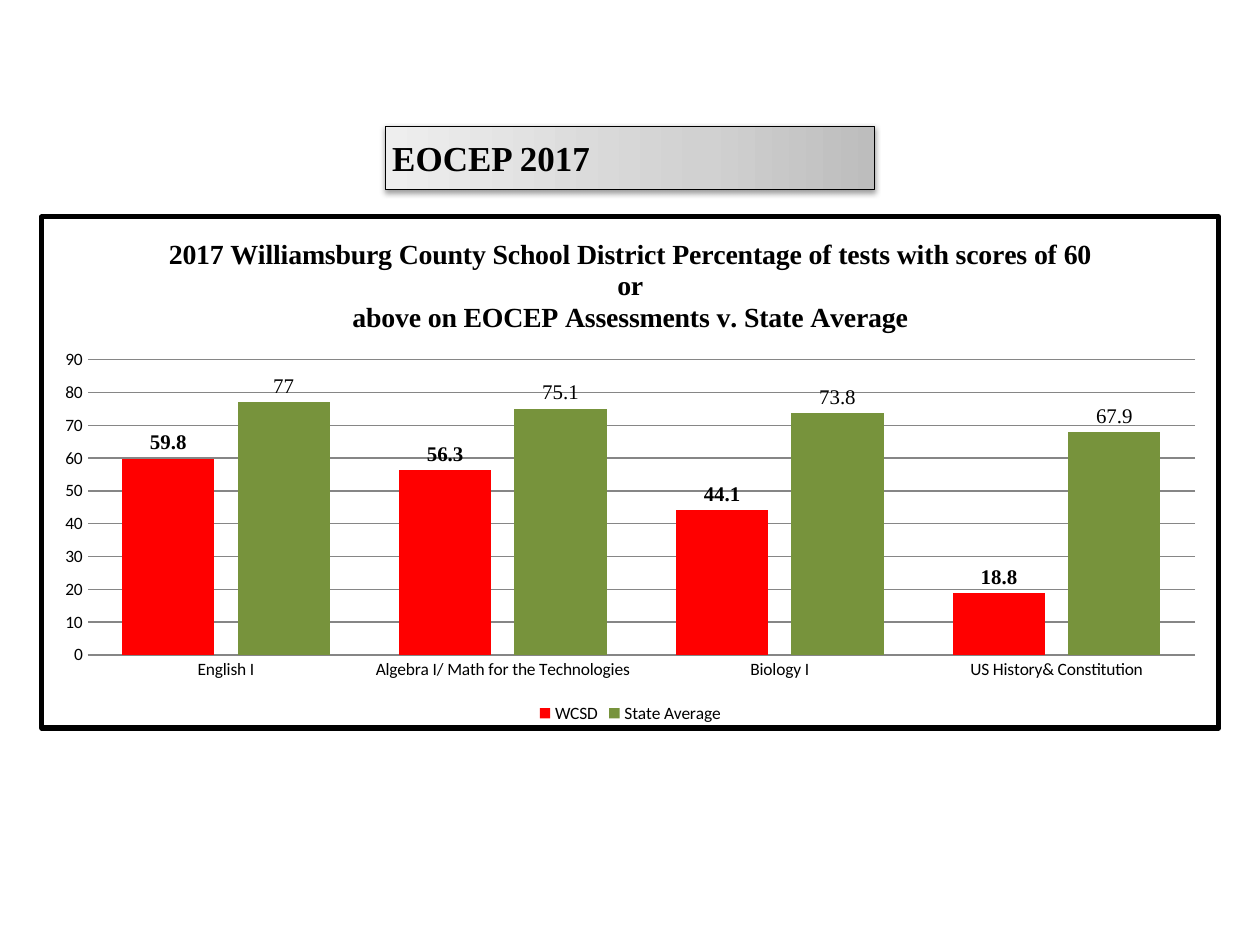
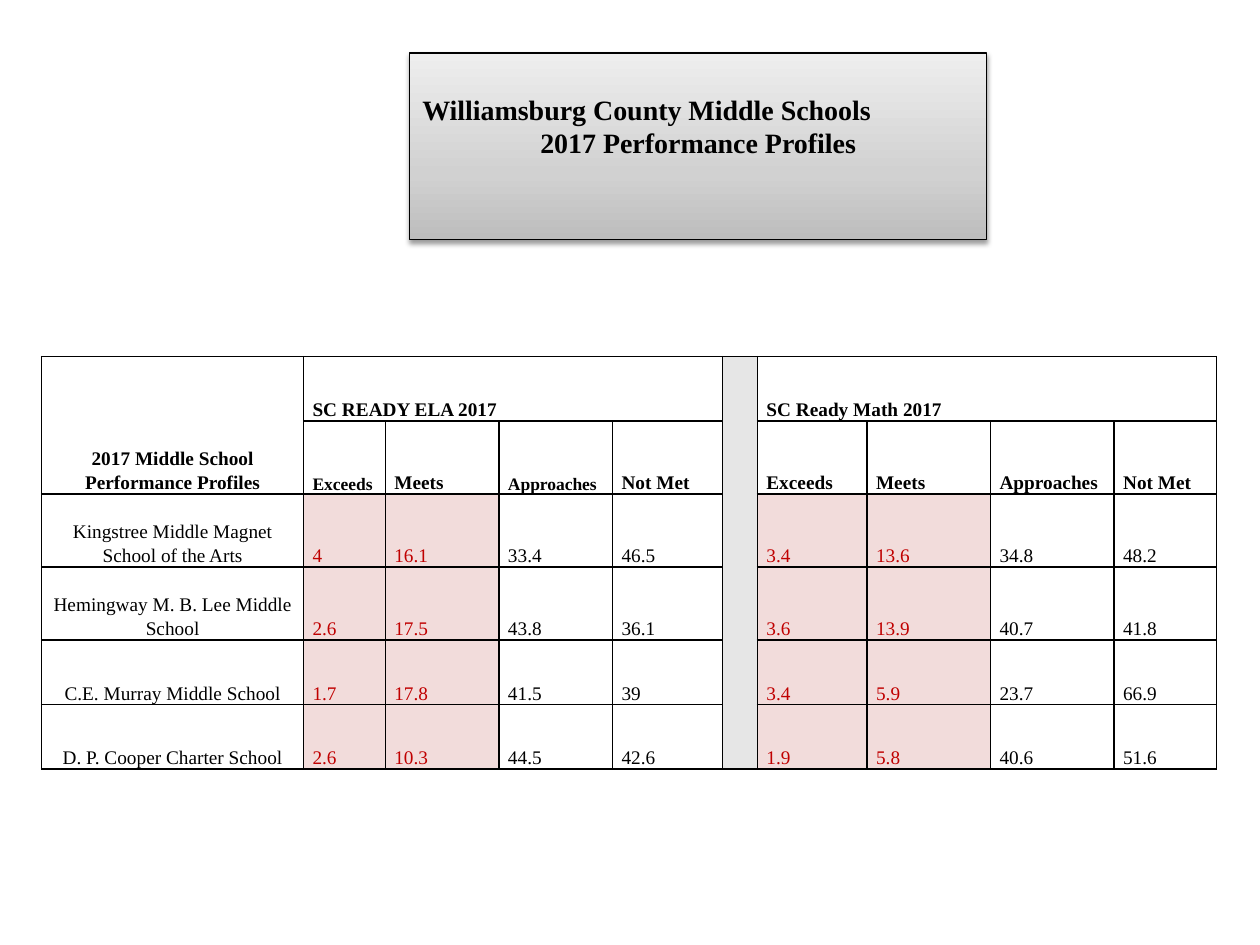
from lxml import etree
from pptx import Presentation, util as u
from pptx.chart.data import CategoryChartData
from pptx.dml.color import RGBColor
from pptx.enum import chart as ch, text as tx
from pptx.oxml import parse_xml
from pptx.oxml.ns import nsdecls, qn

# Shared style
SERIF, SANS = "Times New Roman", "Calibri"
BLACK, GRID = "000000", "868686"
RED, GREEN = "FF0000", "77933C"
DARK_RED, PINK, GREY = "C00000", "F2DCDB", "E6E6E6"
BANNER_STOPS = [(0, "BDBDBD"), (35, "D1D1D1"), (100, "EEEEEE")]
LEFT, CENTER = tx.PP_ALIGN.LEFT, tx.PP_ALIGN.CENTER

# Chart content
SUBJECTS = ["English I", "Algebra I/ Math for the Technologies",
            "Biology I", "US History& Constitution"]
SCORES = [("WCSD", [59.8, 56.3, 44.1, 18.8], RED, True),
          ("State Average", [77, 75.1, 73.8, 67.9], GREEN, False)]
CHART_TITLE = ("2017 Williamsburg County School District Percentage of tests "
               "with scores of 60 or\n"
               "above on EOCEP Assessments v. State Average")

# Table content: four ELA values, then four Math values
LEVELS = ["Exceeds", "Meets", "Approaches", "Not Met"]
SCHOOLS = [
    ("Kingstree Middle Magnet School of the Arts",
     "4 16.1 33.4 46.5", "3.4 13.6 34.8 48.2"),
    ("Hemingway M. B. Lee Middle School",
     "2.6 17.5 43.8 36.1", "3.6 13.9 40.7 41.8"),
    ("C.E. Murray Middle School",
     "1.7 17.8 41.5 39", "3.4 5.9 23.7 66.9"),
    ("D. P. Cooper Charter School",
     "2.6 10.3 44.5 42.6", "1.9 5.8 40.6 51.6"),
]
COLUMNS = [5.28, 1.65, 2.29, 2.29, 2.21, 0.71, 2.21, 2.49, 2.49, 2.06]
ROWS = [1.3, 1.47, 1.47, 1.47, 1.3, 1.3]
ELA, GAP, MATH = 1, 5, 6  # first column of each block


def rgb(value):
    return RGBColor.from_string(value)


def style_font(font, size, bold=False, color=BLACK, name=SERIF):
    font.name, font.size, font.bold = name, u.Pt(size), bold
    font.color.rgb = rgb(color)


def write(frame, text, size=11, bold=False, color=BLACK, aligns=(LEFT,),
          spacing=None):
    """Fill a frame; each line is a paragraph, the last alignment repeats."""
    frame.text = text
    for i, paragraph in enumerate(frame.paragraphs):
        paragraph.alignment = aligns[min(i, len(aligns) - 1)]
        if spacing:
            paragraph.line_spacing = spacing
        for run in paragraph.runs:
            style_font(run.font, size, bold, color)


def add_banner(slide, text, box, size, aligns, anchor, top_inset=0.13,
               rotation=0):
    """Turn the slide title into a shaded, outlined banner."""
    banner = slide.shapes.title
    banner.left, banner.top, banner.width, banner.height = map(u.Cm, box)
    banner.rotation = rotation
    stops = "".join(f'<a:gs pos="{pos * 1000}"><a:srgbClr val="{color}"/></a:gs>'
                    for pos, color in BANNER_STOPS)
    properties = banner.element.spPr
    properties.append(parse_xml(
        f'<a:gradFill {nsdecls("a")} rotWithShape="1"><a:gsLst>{stops}</a:gsLst>'
        '<a:lin ang="16200000" scaled="1"/></a:gradFill>'))
    banner.line.color.rgb = rgb(BLACK)
    banner.line.width = u.Pt(0.75)
    properties.append(parse_xml(
        f'<a:effectLst {nsdecls("a")}><a:outerShdw blurRad="39400" dist="20300" '
        'dir="5400000" rotWithShape="0"><a:srgbClr val="000000">'
        '<a:alpha val="38000"/></a:srgbClr></a:outerShdw></a:effectLst>'))
    frame = banner.text_frame
    frame.word_wrap = True
    frame.auto_size = tx.MSO_AUTO_SIZE.NONE
    frame.vertical_anchor = anchor
    frame.margin_top = u.Cm(top_inset)
    if rotation:  # vertical text reads level once the box is turned
        frame._txBody.bodyPr.set("vert", "eaVert")
    write(frame, text, size, True, aligns=aligns)


def add_score_chart(slide):
    data = CategoryChartData()
    data.categories = SUBJECTS
    for name, values, _, _ in SCORES:
        data.add_series(name, values)
    box = map(u.Cm, (0.79, 4.32, 23.83, 10.41))
    chart = slide.shapes.add_chart(ch.XL_CHART_TYPE.COLUMN_CLUSTERED,
                                   *box, data).chart
    style_font(chart.font, 10, name=SANS)
    chart.has_title = True
    write(chart.chart_title.text_frame, CHART_TITLE, 16, True, aligns=(CENTER,))
    chart.chart_title.include_in_layout = False
    chart.has_legend = True
    chart.legend.position = ch.XL_LEGEND_POSITION.BOTTOM
    chart.legend.include_in_layout = False

    # Axes
    scale, subjects = chart.value_axis, chart.category_axis
    scale.minimum_scale, scale.maximum_scale, scale.major_unit = 0, 90, 10
    for axis in (scale, subjects):
        axis.major_tick_mark = ch.XL_TICK_MARK.NONE
    scale.format.line.fill.background()
    for line in (scale.major_gridlines.format.line, subjects.format.line):
        line.color.rgb = rgb(GRID)
        line.width = u.Pt(0.75)

    # Columns and their labels
    plot = chart.plots[0]
    plot.gap_width, plot.overlap, plot.vary_by_categories = 75, -25, False
    for series, (_, _, color, bold) in zip(plot.series, SCORES):
        series.format.fill.solid()
        series.format.fill.fore_color.rgb = rgb(color)
        labels = series.data_labels
        labels.show_value = True
        labels.position = ch.XL_LABEL_POSITION.OUTSIDE_END
        style_font(labels.font, 12, bold)

    # Frame around the chart
    chart._chartSpace.find(qn("c:chart")).addnext(parse_xml(
        f'<c:spPr {nsdecls("c", "a")}><a:ln w="38100"><a:solidFill>'
        f'<a:srgbClr val="{BLACK}"/></a:solidFill></a:ln></c:spPr>'))


def format_cell(cell, fill=None):
    cell.margin_left = cell.margin_right = u.Cm(0.18)
    cell.margin_top = cell.margin_bottom = 0
    cell.vertical_anchor = tx.MSO_ANCHOR.BOTTOM
    if fill:
        cell.fill.solid()
        cell.fill.fore_color.rgb = rgb(fill)
    else:
        cell.fill.background()
    properties = cell._tc.get_or_add_tcPr()
    for i, side in enumerate("LRTB"):
        border = etree.Element(qn(f"a:ln{side}"), w="12700")
        solid = etree.SubElement(border, qn("a:solidFill"))
        etree.SubElement(solid, qn("a:srgbClr"), val=BLACK)
        properties.insert(i, border)


def add_profile_table(slide):
    box = map(u.Cm, (0.84, 7.19, sum(COLUMNS), sum(ROWS)))
    table = slide.shapes.add_table(len(ROWS), len(COLUMNS), *box).table
    table.first_row = table.horz_banding = False
    for column, width in zip(table.columns, COLUMNS):
        column.width = u.Cm(width)
    for row, height in zip(table.rows, ROWS):
        row.height = u.Cm(height)

    # Fills mark the gap and the Exceeds and Meets columns
    shaded = {ELA, ELA + 1, MATH, MATH + 1}
    for r in range(len(ROWS)):
        for c in range(len(COLUMNS)):
            fill = GREY if c == GAP else PINK if r > 1 and c in shaded else None
            format_cell(table.cell(r, c), fill)

    def put(r, c, text, **look):
        write(table.cell(r, c).text_frame, text, spacing=1.15, **look)

    # Headings
    table.cell(0, 0).merge(table.cell(1, 0))
    table.cell(0, GAP).merge(table.cell(len(ROWS) - 1, GAP))
    put(0, 0, "2017 Middle School\nPerformance Profiles", bold=True,
        aligns=(CENTER,))
    for start, test in ((ELA, "SC READY ELA 2017"), (MATH, "SC Ready Math 2017")):
        table.cell(0, start).merge(table.cell(0, start + 3))
        put(0, start, test, bold=True)
        for i, level in enumerate(LEVELS):
            narrow = start == ELA and level in ("Exceeds", "Approaches")
            put(1, start + i, level, size=10 if narrow else 11, bold=True)

    # Schools
    for r, (school, ela, math_scores) in enumerate(SCHOOLS, 2):
        put(r, 0, school, aligns=(CENTER,))
        for start, values in ((ELA, ela), (MATH, math_scores)):
            for c, value in enumerate(values.split(), start):
                put(r, c, value, color=DARK_RED if c in shaded else BLACK)


def main():
    deck = Presentation()
    deck.slide_width, deck.slide_height = u.Cm(25.4), u.Cm(19.05)
    title_only = deck.slide_layouts[5]

    # EOCEP results
    results = deck.slides.add_slide(title_only)
    add_banner(results, "EOCEP 2017", (12.07, -1.75, 1.27, 9.86), 20,
               (LEFT,), tx.MSO_ANCHOR.MIDDLE, rotation=270)
    add_score_chart(results)

    # Middle school profiles
    profiles = deck.slides.add_slide(title_only)
    add_banner(profiles,
               "Williamsburg County Middle Schools\n2017 Performance Profiles",
               (8.26, 1.07, 11.63, 3.76), 16, (LEFT, CENTER),
               tx.MSO_ANCHOR.TOP, top_inset=0.79)
    add_profile_table(profiles)

    deck.save("out.pptx")


if __name__ == "__main__":
    main()
